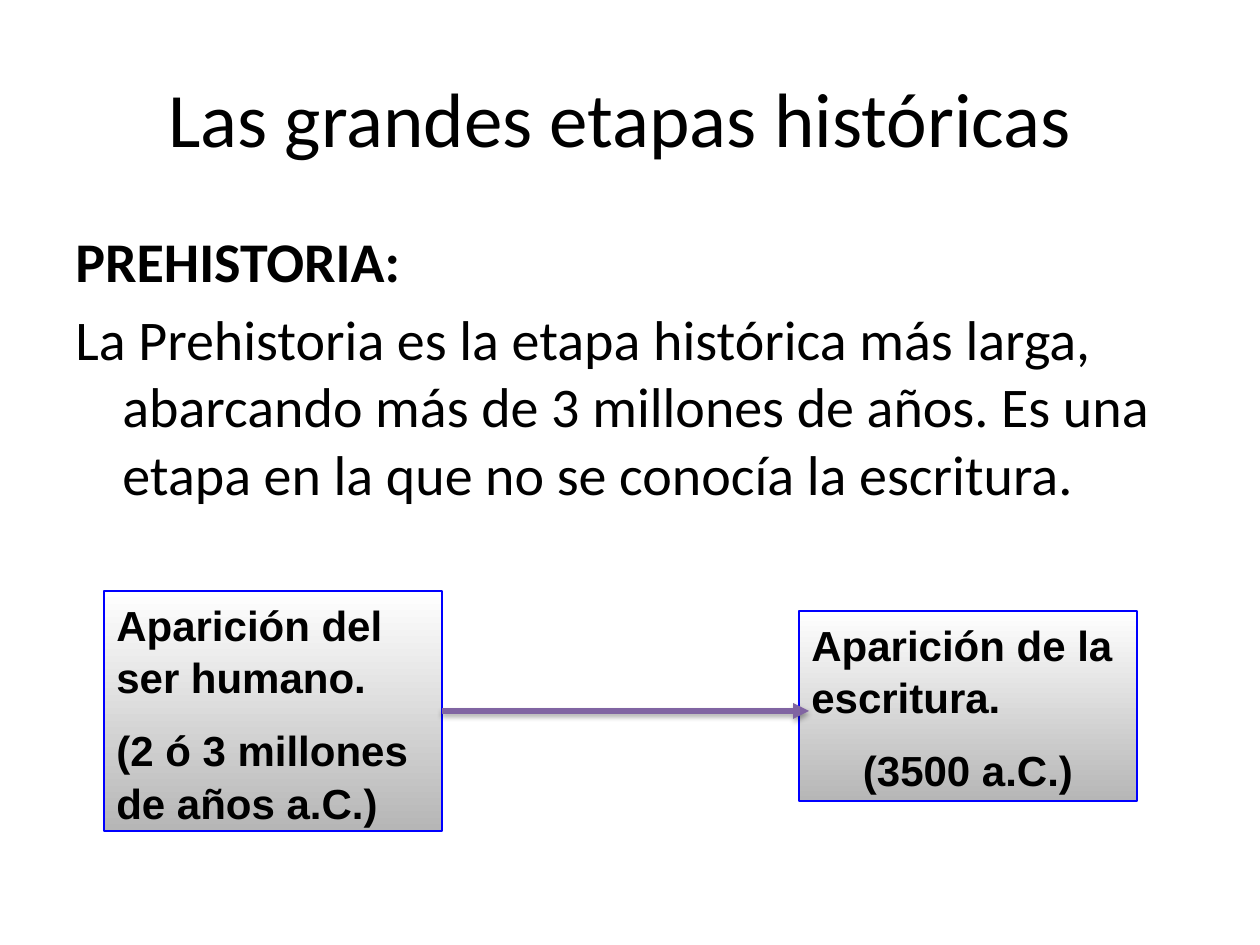
from lxml import etree
from pptx import Presentation
from pptx import util as u
from pptx.dml.color import RGBColor
from pptx.enum import shapes, text
from pptx.oxml import parse_xml

PX = 914400 // 126
COLOURS = {"text": "000000", "top": "FFFFFF", "bottom": "B6B6B6",
           "border": "0000FF", "arrow": "8064A2"}
DRAWING = "http://schemas.openxmlformats.org/drawingml/2006/main"


def colour(name):
    return RGBColor.from_string(COLOURS[name])


def write(frame, lines, font, size, gap, spacing=1.0):
    """Fill the frame with (text, bold, alignment) paragraphs."""
    frame.word_wrap = True
    for number, (words, bold, alignment) in enumerate(lines):
        paragraph = frame.add_paragraph() if number else frame.paragraphs[0]
        paragraph.text = words
        paragraph.alignment = alignment
        paragraph.space_before = u.Pt(gap)
        paragraph.line_spacing = spacing
        paragraph.font.name = font
        paragraph.font.size = u.Pt(size)
        paragraph.font.bold = bold
        paragraph.font.color.rgb = colour("text")


LEFT, CENTER = text.PP_ALIGN.LEFT, text.PP_ALIGN.CENTER

deck = Presentation()
deck.slide_width, deck.slide_height = u.Inches(10), u.Inches(7.5)
slide = deck.slides.add_slide(deck.slide_layouts[6])

# Title and definition
title = slide.shapes.add_textbox(63 * PX, 38 * PX, 1114 * PX, 158 * PX)
title.text_frame.vertical_anchor = text.MSO_ANCHOR.MIDDLE
write(title.text_frame, [("Las grandes etapas históricas", False, CENTER)],
      "Calibri", 44, 0)

definition = slide.shapes.add_textbox(63 * PX, 220 * PX, 1134 * PX, 624 * PX)
write(definition.text_frame, [
    ("PREHISTORIA:", True, LEFT),
    ("La Prehistoria es la etapa histórica más larga, abarcando más de "
     "3 millones de años. Es una etapa en la que no se conocía la escritura.",
     False, LEFT),
], "Calibri", 32, 6.4)
for paragraph in definition.text_frame.paragraphs:
    properties = paragraph._p.get_or_add_pPr()
    properties.set("marL", str(47 * PX))
    properties.set("indent", str(-47 * PX))

# Start and end of the period
milestones = []
for left, top, height, lines in [
    (104, 591, 240, [("Aparición del ser humano.", True, LEFT),
                     ("(2 ó 3 millones de años a.C.)", True, LEFT)]),
    (799, 611, 190, [("Aparición de la escritura.", True, LEFT),
                     ("(3500 a.C.)", True, CENTER)]),
]:
    milestone = slide.shapes.add_shape(
        shapes.MSO_SHAPE.RECTANGLE, left * PX, top * PX, 338 * PX, height * PX)
    milestone.shadow.inherit = False
    milestone.fill.gradient()
    milestone.fill.gradient_angle = 270
    for stop, name in zip(milestone.fill.gradient_stops, ("top", "bottom")):
        stop.color.rgb = colour(name)
    milestone.line.color.rgb = colour("border")
    milestone.line.width = u.Pt(0.75)
    milestone.text_frame.vertical_anchor = text.MSO_ANCHOR.TOP
    write(milestone.text_frame, lines, "Arial", 24, 12, 1.04)
    milestones.append(milestone)

# Arrow from the first milestone to the second
arrow = slide.shapes.add_connector(
    shapes.MSO_CONNECTOR.STRAIGHT, 442 * PX, 711 * PX, 809 * PX, 711 * PX)
arrow.begin_connect(milestones[0], 3)
arrow.line.color.rgb = colour("arrow")
arrow.line.width = u.Pt(3)
etree.SubElement(arrow.line._get_or_add_ln(), f"{{{DRAWING}}}tailEnd", type="triangle")
arrow._element.spPr.append(parse_xml(
    f'<a:effectLst xmlns:a="{DRAWING}">'
    f'<a:outerShdw blurRad="{u.Pt(3.1)}" dist="{u.Pt(1.8)}" dir="5400000" rotWithShape="0">'
    f'<a:srgbClr val="{COLOURS["text"]}"><a:alpha val="35000"/></a:srgbClr>'
    '</a:outerShdw></a:effectLst>'))

deck.save("out.pptx")
